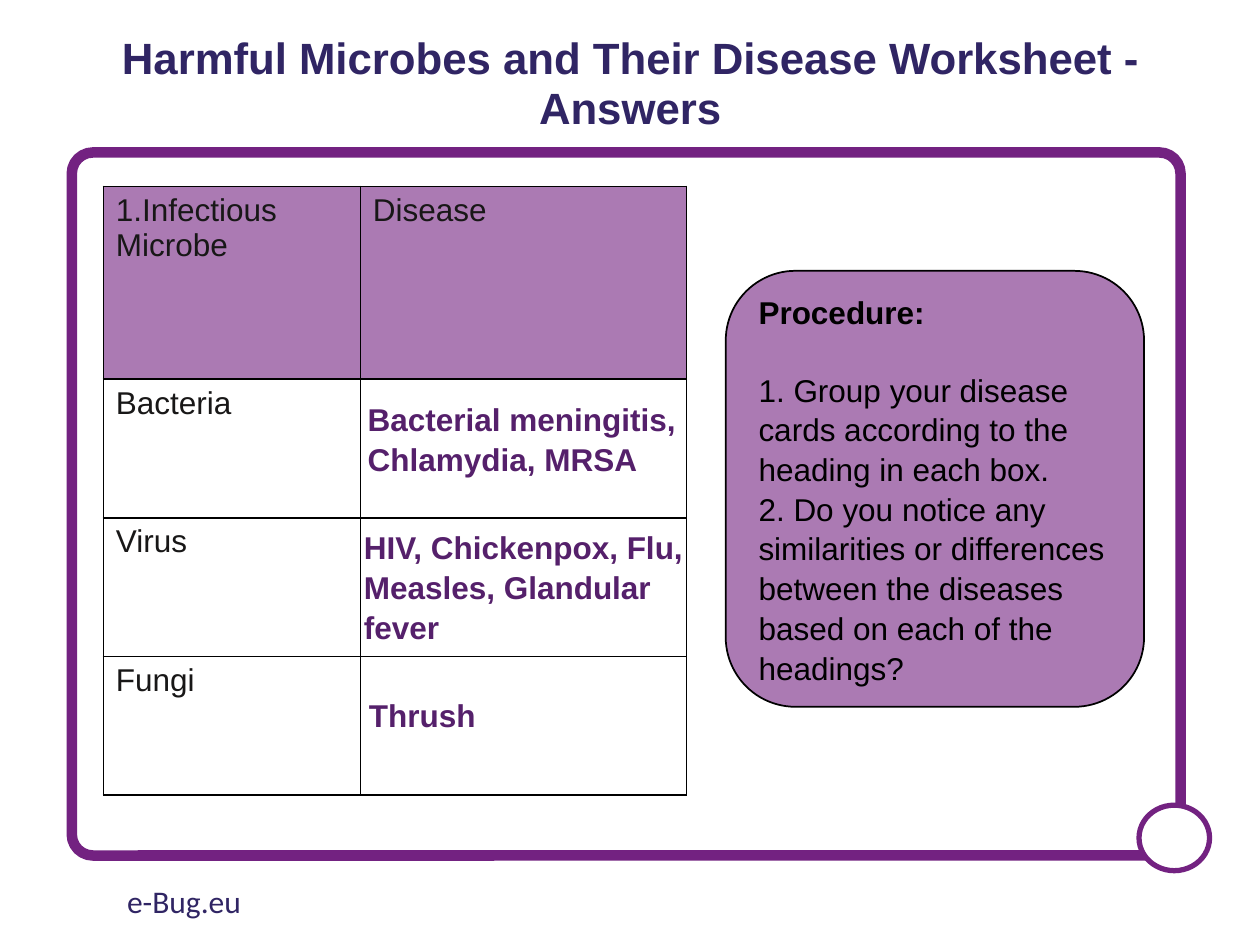
from dataclasses import dataclass
from lxml.etree import SubElement as Sub
from pptx import Presentation as Deck
from pptx.dml.color import RGBColor as Rgb
from pptx.enum.shapes import MSO_SHAPE as Kind
from pptx.enum.text import MSO_ANCHOR as Anchor, PP_ALIGN as Align
from pptx.oxml.ns import qn
from pptx.util import Inches, Pt


@dataclass(frozen=True)
class Theme:
    font: str = "Arial"
    foot: str = "Calibri"
    navy: str = "302564"
    plum: str = "732281"
    deep: str = "55206B"
    ink: str = "181717"
    black: str = "000000"
    white: str = "FFFFFF"
    head: int = 25
    body: int = 18
    alpha: int = 60


class Sheet:
    def __init__(self, slide, theme):
        self.slide = slide
        self.theme = theme

    def words(self, frame, lines, color, size=None, font=None, bold=False,
              align=Align.LEFT, space=None):
        frame.word_wrap = True
        for i, line in enumerate(lines):
            para = frame.paragraphs[0] if i == 0 else frame.add_paragraph()
            para.alignment = align
            if space:
                para.line_spacing = space
            run = para.add_run()
            run.text = line
            face = run.font
            face.name = font or self.theme.font
            face.size = Pt(size or self.theme.body)
            face.bold = bold
            face.color.rgb = Rgb.from_string(color)

    def text(self, area, lines, color, anchor=Anchor.TOP, **style):
        box = self.slide.shapes.add_textbox(*map(Inches, area))
        box.text_frame.vertical_anchor = anchor
        self.words(box.text_frame, lines, color, **style)

    def tint(self, fill, node):
        fill.solid()
        fill.fore_color.rgb = Rgb.from_string(self.theme.plum)
        color = node.find(qn("a:solidFill")).find(qn("a:srgbClr"))
        Sub(color, qn("a:alpha"), val=str(self.theme.alpha * 1000))

    def shape(self, kind, area, color, width):
        item = self.slide.shapes.add_shape(kind, *map(Inches, area))
        item.shadow.inherit = False
        item.fill.background()
        item.line.color.rgb = Rgb.from_string(color)
        item.line.width = Pt(width)
        return item

    def edge(self, cell):
        props = cell._tc.get_or_add_tcPr()
        for side in ("lnL", "lnR", "lnT", "lnB"):
            line = Sub(props, qn(f"a:{side}"), w=str(Pt(1)))
            fill = Sub(line, qn("a:solidFill"))
            Sub(fill, qn("a:srgbClr"), val=self.theme.black)

    def table(self, left, top, cols, rows, data):
        area = map(Inches, (left, top, sum(cols), sum(rows)))
        grid = self.slide.shapes.add_table(len(rows), len(cols), *area).table
        grid.first_row = grid.horz_banding = False
        for col, width in zip(grid.columns, cols):
            col.width = Inches(width)
        for r, (row, height) in enumerate(zip(grid.rows, rows)):
            row.height = Inches(height)
            for cell, label in zip(row.cells, data[r]):
                self.edge(cell)
                if r == 0:
                    self.tint(cell.fill, cell._tc.tcPr)
                else:
                    cell.fill.background()
                if label:
                    self.words(cell.text_frame, [label], self.theme.ink)


def main():
    deck = Deck()
    deck.slide_width, deck.slide_height = Inches(10), Inches(7.5)
    theme = Theme()
    sheet = Sheet(deck.slides.add_slide(deck.slide_layouts[6]), theme)

    sheet.text((0.69, 0.2, 8.62, 0.94),
               ["Harmful Microbes and Their Disease Worksheet - Answers"],
               theme.navy, Anchor.MIDDLE, size=theme.head, bold=True,
               align=Align.CENTER, space=0.95)

    sheet.table(0.82, 1.48, (2.04, 2.59), (1.53, 1.1, 1.1, 1.1), [
        ("1.Infectious Microbe", "Disease"),
        ("Bacteria", ""),
        ("Virus", ""),
        ("Fungi", ""),
    ])

    answers = [
        (2.82, 3.11, 0.71, ["Bacterial meningitis,", "Chlamydia, MRSA"]),
        (2.79, 4.13, 1.01, ["HIV, Chickenpox, Flu, Measles, Glandular fever"]),
        (2.83, 5.46, 0.4, ["Thrush"]),
    ]
    for left, top, height, lines in answers:
        sheet.text((left, top, 2.77, height), lines, theme.deep,
                   bold=True, space=1.05)

    panel = sheet.shape(Kind.ROUNDED_RECTANGLE, (5.76, 2.15, 3.32, 3.46),
                        theme.black, 1)
    sheet.tint(panel.fill, panel._element.spPr)
    frame = panel.text_frame
    frame.vertical_anchor = Anchor.MIDDLE
    sheet.words(frame, [
        "Procedure:",
        "1. Group your disease cards according to the heading in each box.",
        "2. Do you notice any similarities or differences between the "
        "diseases based on each of the headings?",
    ], theme.black, space=1.05)
    title = frame.paragraphs[0]
    title.runs[0].font.bold = True
    title.space_after = Pt(21.6)

    border = sheet.shape(Kind.ROUNDED_RECTANGLE, (0.57, 1.21, 8.8, 5.58),
                         theme.plum, 6)
    border.adjustments[0] = 0.03
    knob = sheet.shape(Kind.OVAL, (9.04, 6.39, 0.56, 0.52), theme.plum, 3)
    knob.fill.solid()
    knob.fill.fore_color.rgb = Rgb.from_string(theme.white)

    sheet.text((0.91, 6.95, 3.38, 0.4), ["e-Bug.eu"], theme.navy,
               font=theme.foot)
    deck.save("out.pptx")


if __name__ == "__main__":
    main()
